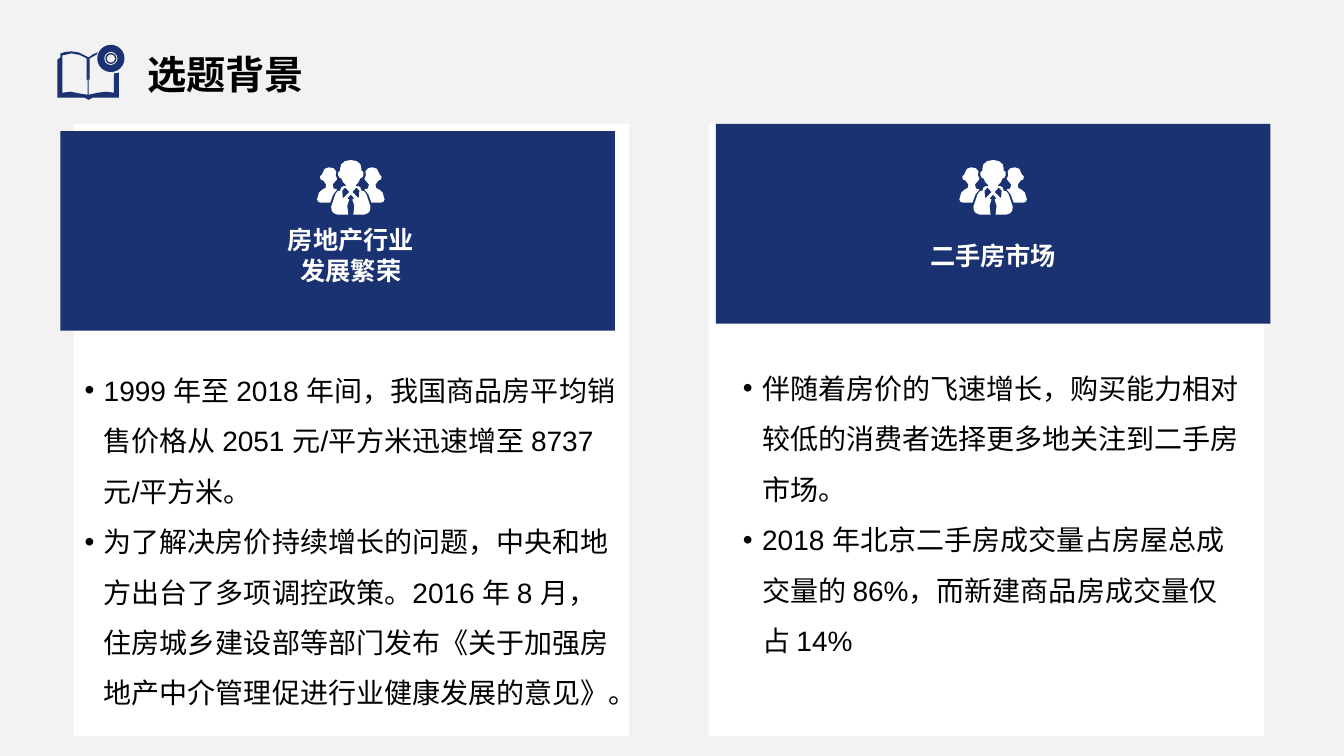
from lxml import etree
from pptx import Presentation
from pptx import util as u
from pptx.dml.color import RGBColor
from pptx.enum import shapes, text
from pptx.oxml.ns import qn

Inches, Pt = u.Inches, u.Pt
NAVY, WHITE, BLACK, GREY = "1A3172", "FFFFFF", "000000", "F2F2F2"


def paint(fill, color):
    fill.solid()
    fill.fore_color.rgb = RGBColor.from_string(color)


def add_run(p, words, size, color, bold=False):
    r = p.add_run()
    r.text = words
    r.font.name = "Arial"
    r.font.size = Pt(size)
    r.font.bold = bold
    paint(r.font.fill, color)


prs = Presentation()
prs.slide_width, prs.slide_height = Inches(13.33), Inches(7.5)
s = prs.slides.add_slide(prs.slide_layouts[5])
paint(s.background.fill, GREY)

title = s.shapes.title
title.left, title.top = Inches(1.36), Inches(0.29)
title.width, title.height = Inches(2.06), Inches(0.73)
tf = title.text_frame
tf.auto_size = text.MSO_AUTO_SIZE.NONE
tf.vertical_anchor = text.MSO_ANCHOR.BOTTOM
p = tf.paragraphs[0]
p.alignment = text.PP_ALIGN.LEFT
p.line_spacing = 0.9
add_run(p, "选题背景", 28, BLACK, True)

book = [
    [(71, 51), (78, 52), (88, 57), (92, 54), (97, 52), (96, 54), (89, 58), (89, 80),
     (88, 78), (88, 94), (97, 92), (105, 91), (113, 92), (113, 73), (118, 72),
     (118, 97), (92, 97), (88, 99), (84, 97), (57, 97), (57, 59), (60, 57),
     (60, 53), (65, 51.5)],
    [(71, 53), (62, 55), (62, 92), (70, 91), (80, 93), (87, 94), (87, 78), (86, 80),
     (86, 58), (79, 54.5)],
]
leader = [
    (0, 0), (1.5, 0), (6, 1), (9.5, 4), (10.5, 8), (10.5, 10), (12.5, 12), (12.5, 15),
    (11.5, 17), (9.5, 18), (7.5, 22), (5, 24.5), (5, 26), (7, 25.5), (9.5, 27),
    (10.5, 30), (13.5, 31), (15.5, 34), (19.5, 46), (19, 50), (17, 52.5), (13, 54),
    (2.5, 54), (3.5, 45), (1.5, 39), (3.5, 38), (0, 34)]
lapel = [(5.5, 27), (1.5, 31.5), (7, 37), (8, 37), (8.5, 30)]
colleague = [
    (21.5, 7), (26, 8.5), (28.5, 14), (30.5, 16), (30, 19), (27.5, 20), (24.5, 24),
    (25, 27.5), (28, 29), (31.5, 32), (33.5, 39), (32, 41.5), (29.5, 42), (20.5, 42),
    (17.5, 34), (13.5, 29), (17, 28), (18, 24), (14.5, 20), (13.5, 18.5), (15, 15),
    (14.5, 11), (17, 8)]
people = [leader + [(-x, y) for x, y in leader[-2:0:-1]]]
for half in (lapel, colleague):
    people += [half, [(-x, y) for x, y in half]]


def add_icon(contours, left, top, color):
    scaled = [[(x * 10, y * 10) for x, y in c] for c in contours]
    fb = s.shapes.build_freeform(*scaled[0][0], scale=Inches(1) / 1000)
    fb.add_line_segments(scaled[0][1:])
    for c in scaled[1:]:
        fb.move_to(*c[0])
        fb.add_line_segments(c[1:])
    sp = fb.convert_to_shape(Inches(left), Inches(top))
    sp.shadow.inherit = False
    paint(sp.fill, color)
    sp.line.fill.background()


add_icon(book, 0, 0, NAVY)
for size, cx, cy, color in [(0.27, 1.1, 0.58, NAVY), (0.13, 1.1, 0.58, GREY),
                            (0.11, 1.1, 0.58, NAVY), (0.08, 1.1, 0.58, GREY)]:
    sp = s.shapes.add_shape(shapes.MSO_SHAPE.OVAL, Inches(cx - size / 2),
                            Inches(cy - size / 2), Inches(size), Inches(size))
    sp.shadow.inherit = False
    paint(sp.fill, color)
    sp.line.fill.background()

columns = [
    (0.73, (0.6, 1.3), 3.48, "房地产行业发展繁荣", (0.74, 3.49, 5.49, 0.64),
     ["1999 年至 2018 年间，我国商品房平均销售价格从 2051 元/平方米迅速增至 8737 元/平方米。",
      "为了解决房价持续增长的问题，中央和地方出台了多项调控政策。2016 年 8 月，住房城乡建设部等部门发布《关于加强房地产中介管理促进行业健康发展的意见》。"]),
    (7.03, (7.1, 1.23), 9.85, "二手房市场", (7.27, 3.47, 5.15, 3.13),
     ["伴随着房价的飞速增长，购买能力相对较低的消费者选择更多地关注到二手房市场。",
      "2018 年北京二手房成交量占房屋总成交量的 86%，而新建商品房成交量仅占 14%"]),
]
for card_left, banner, center, heading, body, points in columns:
    for box, color in [((card_left, 1.23, 5.51, 6.07), WHITE), ((*banner, 5.5, 1.98), NAVY)]:
        sp = s.shapes.add_shape(shapes.MSO_SHAPE.RECTANGLE, *map(Inches, box))
        sp.shadow.inherit = False
        paint(sp.fill, color)
        sp.line.fill.background()

    add_icon(people, center, 1.59, WHITE)

    tf = s.shapes.add_textbox(Inches(center - 0.81), Inches(2.21),
                              Inches(1.62), Inches(0.64)).text_frame
    tf.word_wrap = False
    tf.vertical_anchor = text.MSO_ANCHOR.MIDDLE
    p = tf.paragraphs[0]
    p.alignment = text.PP_ALIGN.CENTER
    add_run(p, heading, 18, WHITE, True)

    tf = s.shapes.add_textbox(*map(Inches, body)).text_frame
    tf.word_wrap = True
    for i, point in enumerate(points):
        p = tf.add_paragraph() if i else tf.paragraphs[0]
        p.line_spacing = 1.5
        pPr = p._p.get_or_add_pPr()
        pPr.set("marL", str(Inches(0.19)))
        pPr.set("indent", str(-Inches(0.19)))
        etree.SubElement(pPr, qn("a:buFont")).set("typeface", "Arial")
        etree.SubElement(pPr, qn("a:buChar")).set("char", "•")
        add_run(p, point, 20, BLACK)

prs.save("out.pptx")
